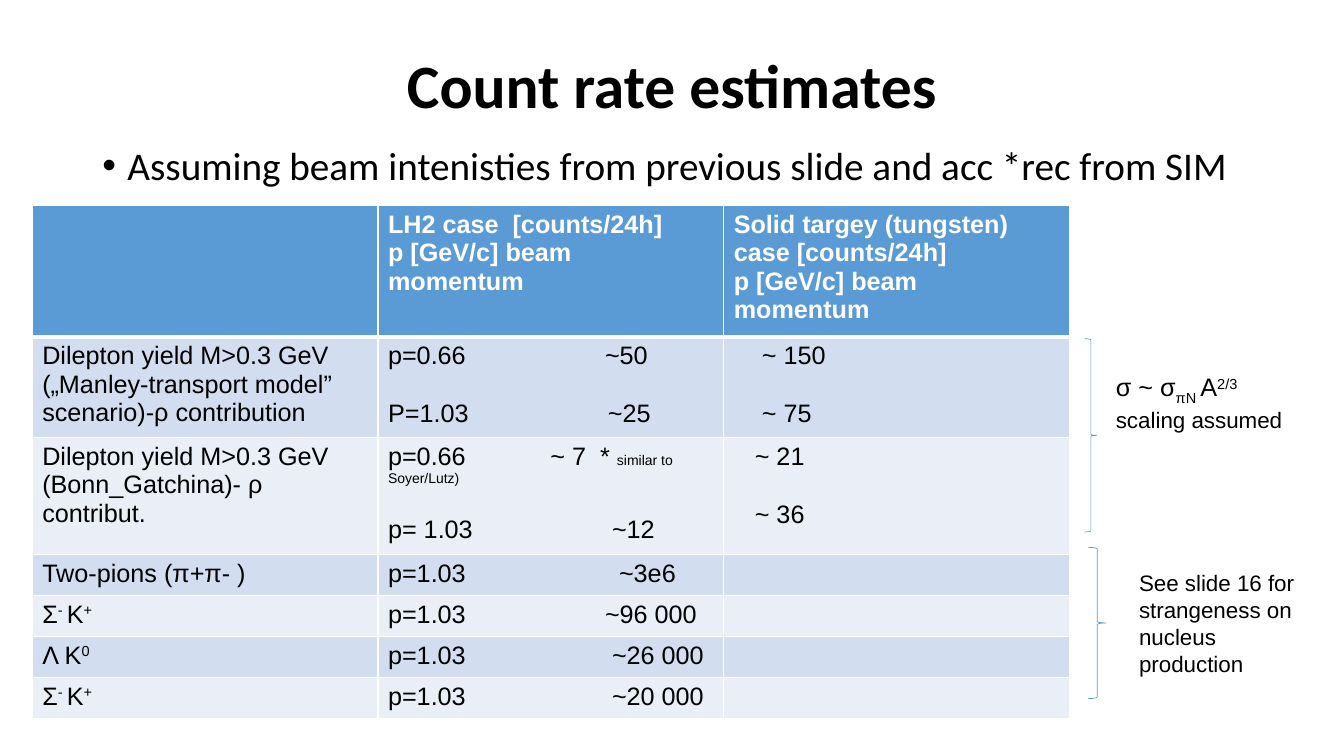
from dataclasses import dataclass

from lxml import etree
from pptx import Presentation
from pptx.dml.color import RGBColor
from pptx.enum.shapes import MSO_SHAPE
from pptx.enum.text import MSO_ANCHOR, MSO_AUTO_SIZE, PP_ALIGN
from pptx.oxml.ns import qn
from pptx.util import Pt

BRACE = MSO_SHAPE.RIGHT_BRACE
MIDDLE = MSO_ANCHOR.MIDDLE
CENTER = PP_ALIGN.CENTER
NO_FIT = MSO_AUTO_SIZE.NONE

COLORS = {
    "text": "000000",
    "white": "FFFFFF",
    "accent": "5B9BD5",
    "band_dark": "D2DEEF",
    "band_light": "EAEFF7",
}
SUPER, SUB = 30000, -25000
COLUMN_WIDTH = 247
ROW_HEIGHTS = [88, 69, 80.5] + [29.25] * 4


@dataclass
class Span:
    text: str
    size: float = 18
    baseline: int = 0


@dataclass
class Para:
    spans: list[Span]
    tab: float = 0
    indent: float = 0
    before: float = 0


@dataclass
class Box:
    left: float
    top: float
    width: float
    height: float

    def lengths(self) -> tuple[Pt, Pt, Pt, Pt]:
        return Pt(self.left), Pt(self.top), Pt(self.width), Pt(self.height)


def line(text: str, tab: float = 0, indent: float = 0, before: float = 0) -> Para:
    return Para([Span(text)], tab, indent, before)


def rates(first: str, second: str, indent: float) -> list[Para]:
    """Two values, one for each beam momentum, set a line apart."""
    return [line(first, indent=indent), line(second, indent=indent, before=21)]


SIGMA_KAON = [Para([Span("Σ"), Span("- ", baseline=SUPER), Span("K"),
                    Span("+", baseline=SUPER)])]
MOMENTUM = "p [GeV/c] beam momentum"
YIELD = "Dilepton yield M>0.3 GeV"

ROWS: list[list[list[Para]]] = [
    [[],
     [line("LH2 case  [counts/24h]"), line(MOMENTUM)],
     [line("Solid targey (tungsten) case [counts/24h]"), line(MOMENTUM)]],
    [[line(YIELD), line("(„Manley-transport model” scenario)-ρ contribution")],
     [line("p=0.66\t~50", tab=155), line("P=1.03\t~25", tab=157, before=21)],
     rates("~ 150", "~ 75", 20)],
    [[line(YIELD), line("(Bonn_Gatchina)- ρ contribut.")],
     [Para([Span("p=0.66\t~ 7  * "), Span("similar to Soyer/Lutz)", 10)], tab=116),
      line("p= 1.03\t~12", tab=160, before=21)],
     rates("~ 21", "~ 36", 15)],
    [[line("Two-pions (π+π- )")], [line("p=1.03\t~3e6", tab=165)], []],
    [SIGMA_KAON, [line("p=1.03\t~96 000", tab=155)], []],
    [[Para([Span("Λ K"), Span("0", baseline=SUPER)])],
     [line("p=1.03\t~26 000", tab=160)], []],
    [SIGMA_KAON, [line("p=1.03\t~20 000", tab=160)], []],
]

BRACES = [Box(775, 242, 8.5, 138), Box(777.5, 391, 12.5, 108)]
NOTES = [
    (Box(790, 262, 147, 48),
     [Para([Span("σ ~ σ"), Span("πN ", baseline=SUB), Span("A"),
            Span("2/3 ", baseline=SUPER), Span("scaling assumed", 16)])]),
    (Box(806.5, 403, 139.5, 85),
     [Para([Span("See slide 16 for strangeness on nucleus production", 16)])]),
]


def rgb(name: str) -> RGBColor:
    return RGBColor.from_string(COLORS[name])


def format_run(r, size: float, font: str, color: str = "text", bold: bool = False) -> None:
    r.font.size = Pt(size)
    r.font.name = font
    r.font.bold = bold
    r.font.color.rgb = rgb(color)


def write_paras(tf, paras: list[Para], color: str = "text", bold: bool = False) -> None:
    for i, para in enumerate(paras):
        p = tf.paragraphs[0] if i == 0 else tf.add_paragraph()
        p.space_before = Pt(para.before)
        pPr = p._p.get_or_add_pPr()
        if para.indent:
            pPr.set("marL", str(Pt(para.indent)))
        if para.tab:
            tabs = etree.SubElement(pPr, qn("a:tabLst"))
            etree.SubElement(tabs, qn("a:tab"), pos=str(Pt(para.tab)), algn="l")
        for span in para.spans:
            r = p.add_run()
            r.text = span.text
            format_run(r, span.size, "Arial", color, bold)
            if span.baseline:
                r._r.get_or_add_rPr().set("baseline", str(span.baseline))


def set_borders(cell, top: float, bottom: float) -> None:
    tcPr = cell._tc.get_or_add_tcPr()
    widths = {"a:lnL": 1, "a:lnR": 1, "a:lnT": top, "a:lnB": bottom}
    for i, (tag, width) in enumerate(widths.items()):
        ln = etree.Element(qn(tag), w=str(Pt(width)))
        fill = etree.SubElement(ln, qn("a:solidFill"))
        etree.SubElement(fill, qn("a:srgbClr"), val=COLORS["white"])
        tcPr.insert(i, ln)


def add_title(s) -> None:
    title = s.shapes.title
    title.left, title.top, title.width, title.height = Box(66, 11, 828, 104).lengths()
    tf = title.text_frame
    tf.text = "Count rate estimates"
    tf.auto_size = NO_FIT
    tf.vertical_anchor = MIDDLE
    p = tf.paragraphs[0]
    p.alignment = CENTER
    p.line_spacing = 0.9
    format_run(p.runs[0], 44, "Calibri", bold=True)


def add_assumption(s) -> None:
    tf = s.shapes.add_textbox(*Box(66, 101, 828, 371).lengths()).text_frame
    tf.word_wrap = True
    tf.text = "Assuming beam intenisties from previous slide and acc *rec from SIM"
    p = tf.paragraphs[0]
    p.line_spacing = 0.9
    p.space_before = Pt(10)
    pPr = p._p.get_or_add_pPr()
    pPr.set("marL", str(Pt(18)))
    pPr.set("indent", str(Pt(-18)))
    etree.SubElement(pPr, qn("a:buFont"), typeface="Arial")
    etree.SubElement(pPr, qn("a:buChar"), char="•")
    format_run(p.runs[0], 28, "Calibri")


def add_rate_table(s) -> None:
    box = Box(23, 147, 3 * COLUMN_WIDTH, sum(ROW_HEIGHTS))
    table = s.shapes.add_table(len(ROWS), 3, *box.lengths()).table
    for column in table.columns:
        column.width = Pt(COLUMN_WIDTH)
    for i, row in enumerate(ROWS):
        table.rows[i].height = Pt(ROW_HEIGHTS[i])
        header = i == 0
        band = "accent" if header else "band_dark" if i % 2 else "band_light"
        for j, paras in enumerate(row):
            cell = table.cell(i, j)
            cell.fill.solid()
            cell.fill.fore_color.rgb = rgb(band)
            set_borders(cell, 3 if i == 1 else 1, 3 if header else 1)
            write_paras(cell.text_frame, paras, "white" if header else "text", header)


def add_brace(s, box: Box) -> None:
    brace = s.shapes.add_shape(BRACE, *box.lengths())
    brace.shadow.inherit = False
    brace.fill.background()
    brace.line.color.rgb = rgb("accent")
    brace.line.width = Pt(0.5)


def add_note(s, box: Box, paras: list[Para]) -> None:
    tf = s.shapes.add_textbox(*box.lengths()).text_frame
    tf.word_wrap = True
    write_paras(tf, paras)


def main() -> None:
    prs = Presentation()
    prs.slide_width, prs.slide_height = Pt(960), Pt(540)
    s = prs.slides.add_slide(prs.slide_layouts[5])
    add_title(s)
    add_assumption(s)
    add_rate_table(s)
    for box in BRACES:
        add_brace(s, box)
    for box, paras in NOTES:
        add_note(s, box, paras)
    prs.save("out.pptx")


if __name__ == "__main__":
    main()
